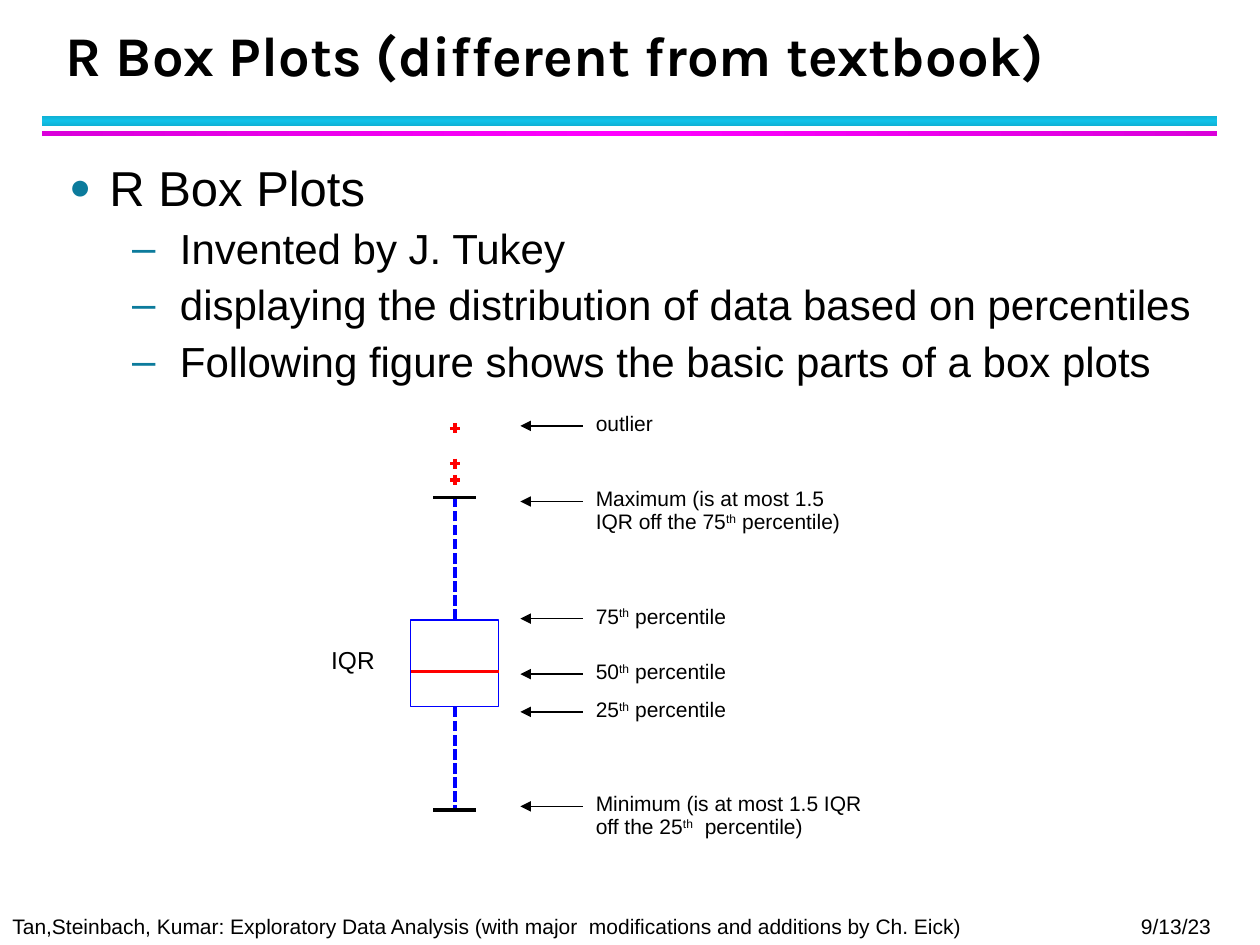
from dataclasses import dataclass

from lxml import etree
from pptx import Presentation
from pptx.dml.color import RGBColor
from pptx.enum.dml import MSO_LINE
from pptx.enum.shapes import MSO_CONNECTOR, MSO_SHAPE
from pptx.enum.text import MSO_ANCHOR, MSO_AUTO_SIZE, PP_ALIGN
from pptx.oxml.ns import qn
from pptx.util import Inches, Pt

STRAIGHT = MSO_CONNECTOR.STRAIGHT
RECTANGLE = MSO_SHAPE.RECTANGLE
DASH = MSO_LINE.SQUARE_DOT
TOP, BOTTOM = MSO_ANCHOR.TOP, MSO_ANCHOR.BOTTOM
LEFT, RIGHT = PP_ALIGN.LEFT, PP_ALIGN.RIGHT
NO_AUTOFIT = MSO_AUTO_SIZE.NONE
TOP_SIDE, BOTTOM_SIDE = 0, 2


@dataclass(frozen=True)
class Theme:
    """Colours, fonts and type sizes of the slide."""
    black: str = "000000"
    white: str = "FFFFFF"
    blue: str = "0000FF"
    red: str = "FF0000"
    bullet: str = "0C7B9C"
    cyan_band: tuple = ("10B0D3", "12C2E9", "10B0D3")
    magenta_band: tuple = ("DA00DA", "FF00FF", "DA00DA")
    title_font: str = "Karla"
    body_font: str = "Arial"
    title_size: int = 32
    level_sizes: tuple = (28, 24)
    range_size: int = 14
    small_size: int = 12


@dataclass(frozen=True)
class Box:
    """A region in inches."""
    left: float
    top: float
    width: float
    height: float

    def lengths(self):
        """Return the region as slide lengths."""
        return [Inches(v) for v in (self.left, self.top, self.width, self.height)]


THEME = Theme()
BULLETS = [
    (0, "R Box Plots"),
    (1, "Invented by J. Tukey"),
    (1, "displaying the distribution of data based on percentiles"),
    (1, "Following figure shows the basic parts of a box plots"),
]
LEVELS = [
    {"char": "●", "percent": 75, "margin": 0.32, "hanging": 0.32},
    {"char": "–", "percent": 100, "margin": 0.88, "hanging": 0.38},
]
LABELS = [
    (0.02, 0.75, 0.25, ["outlier"]),
    (0.62, 2.21, 0.37, ["Maximum (is at most 1.5 IQR off the 75", "th", " percentile)"]),
    (1.55, 1.38, 0.37, ["75", "th", " percentile"]),
    (1.99, 1.38, 0.37, ["50", "th", " percentile"]),
    (2.29, 1.38, 0.37, ["25", "th", " percentile"]),
    (3.04, 2.38, 0.37, ["Minimum (is at most 1.5 IQR off the 25", "th", "  percentile)"]),
]


def write(paragraph, text, size, font=THEME.body_font, bold=False):
    """Add one formatted run and return it."""
    run = paragraph.add_run()
    run.text = text
    for name, value in {"name": font, "size": Pt(size), "bold": bold}.items():
        setattr(run.font, name, value)
    run.font.color.rgb = RGBColor.from_string(THEME.black)
    return run


def space(paragraph, **changes):
    """Apply the common paragraph spacing with any changes."""
    formats = {"alignment": LEFT, "line_spacing": 0.9, "space_before": Pt(0),
               "space_after": Pt(4)}
    for name, value in {**formats, **changes}.items():
        setattr(paragraph, name, value)


def add_text(slide, box, text, size, alignment=LEFT, wrap=True):
    """Add a text box with one paragraph."""
    shape = slide.shapes.add_textbox(*box.lengths())
    shape.text_frame.word_wrap = wrap
    paragraph = shape.text_frame.paragraphs[0]
    space(paragraph, alignment=alignment)
    write(paragraph, text, size)


def add_rectangle(slide, box, fill=None, line=None):
    """Add a plain rectangle."""
    shape = slide.shapes.add_shape(RECTANGLE, *box.lengths())
    shape.shadow.inherit = False
    if fill:
        shape.fill.solid()
        shape.fill.fore_color.rgb = RGBColor.from_string(fill)
    else:
        shape.fill.background()
    if line:
        shape.line.color.rgb = RGBColor.from_string(line)
        shape.line.width = Pt(0)
    else:
        shape.line.fill.background()
    return shape


def add_line(slide, start, end, color, width=0, dash=None, arrow=False):
    """Add a straight line, with an arrowhead at its start if asked."""
    line = slide.shapes.add_connector(STRAIGHT, *[Inches(v) for v in (*start, *end)])
    line.line.color.rgb = RGBColor.from_string(color)
    line.line.width = Pt(width)
    if dash:
        line.line.dash_style = dash
    if arrow:
        etree.SubElement(line.line._get_or_add_ln(), qn("a:headEnd"), type="triangle")
    etree.SubElement(line._element.spPr, qn("a:effectLst"))
    return line


def add_title(slide, box):
    """Place and format the title."""
    title = slide.shapes.title
    title.left, title.top, title.width, title.height = box.lengths()
    frame = title.text_frame
    for name, value in {"vertical_anchor": BOTTOM, "word_wrap": True,
                        "auto_size": NO_AUTOFIT}.items():
        setattr(frame, name, value)
    paragraph = frame.paragraphs[0]
    space(paragraph, line_spacing=Pt(36), space_after=Pt(0))
    write(paragraph, "R Box Plots (different from textbook)", THEME.title_size,
          THEME.title_font, True)


def add_bands(slide, box):
    """Draw the two gradient bands under the title."""
    bands = [(0, 0.08, THEME.cyan_band, 90), (0.12, 0.04, THEME.magenta_band, 0)]
    for offset, height, colors, angle in bands:
        shape = add_rectangle(slide, Box(box.left, box.top + offset, box.width, height))
        shape.fill.gradient()
        shape.fill.gradient_angle = angle
        stops = shape.fill._fill._gradFill.find(qn("a:gsLst"))
        stops.clear()
        for index, color in enumerate(colors):
            stop = etree.SubElement(stops, qn("a:gs"), pos=str(index * 50000))
            etree.SubElement(stop, qn("a:srgbClr"), val=color)


def add_bullets(slide, box):
    """Write the two-level bullet list."""
    frame = slide.shapes.add_textbox(*box.lengths()).text_frame
    frame.word_wrap = True
    for index, (level, text) in enumerate(BULLETS):
        paragraph = frame.add_paragraph() if index else frame.paragraphs[0]
        style, size = LEVELS[level], THEME.level_sizes[level]
        paragraph.level = level
        space(paragraph, space_before=Pt(size / 10))
        properties = paragraph._p.get_or_add_pPr()
        properties.set("marL", str(Inches(style["margin"])))
        properties.set("indent", str(-Inches(style["hanging"])))
        color = etree.SubElement(properties, qn("a:buClr"))
        etree.SubElement(color, qn("a:srgbClr"), val=THEME.bullet)
        etree.SubElement(properties, qn("a:buSzPct"), val=str(style["percent"] * 1000))
        etree.SubElement(properties, qn("a:buFont"), typeface=THEME.body_font)
        etree.SubElement(properties, qn("a:buChar"), char=style["char"])
        write(paragraph, text, size)


def add_box_plot(slide, box):
    """Draw quartile box, median, whiskers and outliers."""
    center, right = box.left + box.width / 2, box.left + box.width
    upper, lower = box.top + 0.59, box.top + box.height
    quartiles = Box(box.left, box.top + 1.56, box.width, 0.69)
    rectangle = add_rectangle(slide, quartiles, line=THEME.blue)
    edges = [(TOP_SIDE, quartiles.top, upper),
             (BOTTOM_SIDE, quartiles.top + quartiles.height, lower)]
    for side, edge, cap in edges:
        whisker = add_line(slide, (center, edge), (center, cap), THEME.blue, dash=DASH)
        whisker.begin_connect(rectangle, side)
        add_line(slide, (center - 0.17, cap), (center + 0.17, cap), THEME.black)
    median = quartiles.top + 0.41
    add_line(slide, (box.left, median), (right, median), THEME.red)
    for offset in (0.04, 0.32, 0.45):
        y = box.top + offset
        for dx, dy in ((0.04, 0), (0, 0.04)):
            add_line(slide, (center - dx, y - dy), (center + dx, y + dy), THEME.red)


def add_labels(slide, box):
    """Write the part names, each with an arrow towards the plot."""
    text_left = box.left + 0.5
    for offset, width, height, parts in LABELS:
        y = box.top + offset
        add_line(slide, (box.left, y), (text_left, y), THEME.black, 0.75, arrow=True)
        label = add_rectangle(slide, Box(text_left, y - 0.15, width, height), THEME.white)
        label.text_frame.vertical_anchor = TOP
        label.text_frame.word_wrap = True
        paragraph = label.text_frame.paragraphs[0]
        space(paragraph)
        for part in parts:
            run = write(paragraph, part, THEME.small_size)
            if part == "th":
                run.font._element.set("baseline", "30000")


def add_footer(slide, box):
    """Write the source line and the date."""
    source = ("Tan,Steinbach, Kumar: Exploratory Data Analysis "
              "(with major  modifications and additions by Ch. Eick)")
    date_width = 1.2
    text_width = box.width - date_width
    add_text(slide, Box(box.left, box.top, text_width, box.height), source,
             THEME.small_size)
    add_text(slide, Box(box.left + text_width, box.top, date_width, box.height),
             "9/13/23", THEME.small_size, RIGHT)


def main():
    """Build the slide and save it."""
    presentation = Presentation()
    presentation.slide_width, presentation.slide_height = Inches(10), Inches(7.5)
    slide = presentation.slides.add_slide(presentation.slide_layouts[5])
    add_bands(slide, Box(0.33, 0.92, 9.33, 0.16))
    add_footer(slide, Box(0, 7.22, 9.71, 0.28))
    add_title(slide, Box(0.42, 0.17, 9.06, 0.58))
    add_bullets(slide, Box(0.45, 1.25, 9.22, 2))
    add_box_plot(slide, Box(3.26, 3.36, 0.7, 3.07))
    add_labels(slide, Box(4.13, 3.36, 2.88, 3.26))
    add_text(slide, Box(2.53, 5.1, 0.55, 0.31), "IQR", THEME.range_size, wrap=False)
    presentation.save("out.pptx")


if __name__ == "__main__":
    main()
